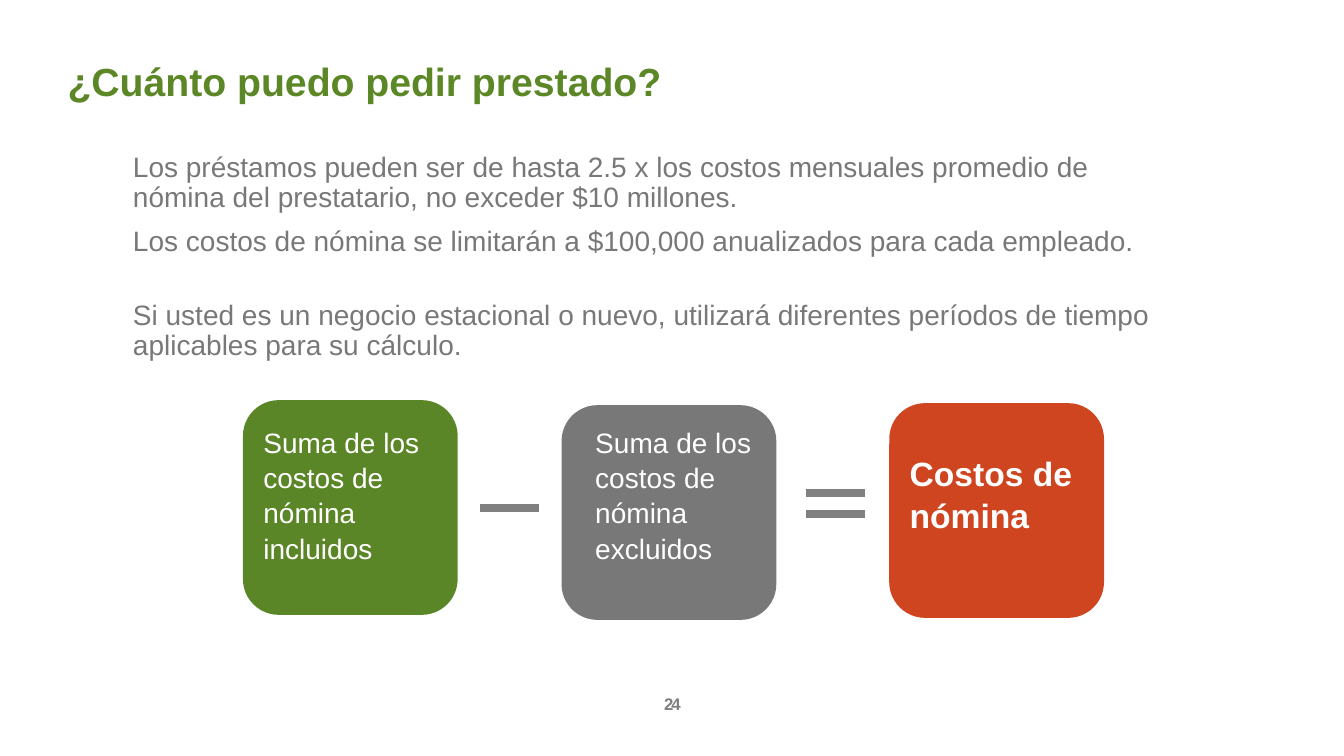
from dataclasses import dataclass
from pptx import Presentation
from pptx.dml.color import RGBColor as RGB
from pptx.enum.shapes import MSO_CONNECTOR as Line, MSO_SHAPE as Shape
from pptx.enum.text import MSO_ANCHOR as Anchor, MSO_AUTO_SIZE as Fit, PP_ALIGN as Align
from pptx.oxml.ns import qn
from pptx.util import Inches, Pt
from lxml.etree import SubElement


@dataclass(frozen=True)
class Theme:
    """Hold the colours, font and type sizes."""
    face: str = "Arial"
    head: str = "5C8727"
    green: str = "5B8627"
    gray: str = "787878"
    rust: str = "CF4520"
    mark: str = "808080"
    white: str = "FFFFFF"
    title: int = 28
    text: int = 20
    total: int = 24
    note: int = 12


THEME = Theme()


def apply(item, form):
    """Set each attribute in a dict of format values."""
    for name, value in form.items():
        setattr(item, name, value)


def place(shape, box):
    """Move a shape to a box given in inches."""
    sides = map(Inches, box)
    apply(shape, dict(zip(("left", "top", "width", "height"), sides)))


def write(frame, lines, size, color, bold=False, gaps=(0,), form=None, **para):
    """Fill a text frame with one paragraph for each line."""
    base = {"word_wrap": True, "auto_size": Fit.NONE, "vertical_anchor": Anchor.TOP}
    apply(frame, base | (form or {}))
    for pos, (line, gap) in enumerate(zip(lines, gaps)):
        part = frame.add_paragraph() if pos else frame.paragraphs[0]
        part.text = line
        apply(part, {"alignment": Align.LEFT, "space_before": Pt(gap)} | para)
        font = part.runs[0].font
        apply(font, {"name": THEME.face, "size": Pt(size), "bold": bold})
        font.color.rgb = RGB.from_string(color)


def add_head(slide, box):
    """Place and format the slide title."""
    head = slide.shapes.title
    place(head, box)
    write(head.text_frame, ["¿Cuánto puedo pedir prestado?"], THEME.title,
          THEME.head, True, line_spacing=0.9)


def add_body(slide, box):
    """Place the loan rules."""
    lines = [
        "Los préstamos pueden ser de hasta 2.5 x los costos mensuales promedio de "
        "nómina del prestatario, no exceder $10 millones.",
        "Los costos de nómina se limitarán a $100,000 anualizados para cada empleado.",
        "Si usted es un negocio estacional o nuevo, utilizará diferentes períodos de "
        "tiempo aplicables para su cálculo.",
    ]
    body = slide.shapes.add_textbox(*map(Inches, box))
    write(body.text_frame, lines, THEME.text, THEME.gray,
          gaps=(0, 10, 31), line_spacing=0.9)


def add_card(slide, box, text, fill, size, pad, bold=False):
    """Place a rounded card with its text inset by pad."""
    card = slide.shapes.add_shape(Shape.ROUNDED_RECTANGLE, *map(Inches, box))
    card.shadow.inherit = False
    card.fill.solid()
    card.fill.fore_color.rgb = RGB.from_string(fill)
    card.line.fill.background()
    left, top = map(Inches, pad)
    form = {"margin_left": left, "margin_top": top, "margin_right": Inches(0.05)}
    write(card.text_frame, [text], size, THEME.white, bold, form=form,
          line_spacing=1.05)


def add_bar(slide, left, top, width):
    """Draw one thick bar of a math sign."""
    ends = map(Inches, (left, top, left + width, top))
    bar = slide.shapes.add_connector(Line.STRAIGHT, *ends)
    bar.line.width = Pt(6)
    bar.line.color.rgb = RGB.from_string(THEME.mark)
    SubElement(bar._element.spPr, qn("a:effectLst"))


def add_sum(slide, box):
    """Place the three cards and the signs between them."""
    left, top, width, height = box
    side = 2.13
    cards = [
        (0, 0, "Suma de los costos de nómina incluidos",
         THEME.green, THEME.text, (0.1, 0.13)),
        (3.16, 0.05, "Suma de los costos de nómina excluidos",
         THEME.gray, THEME.text, (0.23, 0.08)),
        (width - side, 0.03, "Costos de nómina",
         THEME.rust, THEME.total, (0.1, 0.37), True),
    ]
    for dx, dy, *rest in cards:
        add_card(slide, (left + dx, top + dy, side, side), *rest)
    for dx, dy in ((2.35, 1.07), (5.58, 0.92), (5.58, 1.13)):
        add_bar(slide, left + dx, top + dy, 0.59)


def add_page(slide, box):
    """Place the page number."""
    page = slide.shapes.add_textbox(*map(Inches, box))
    write(page.text_frame, ["24"], THEME.note, THEME.mark, True,
          alignment=Align.RIGHT)
    page.text_frame.paragraphs[0].runs[0].font._element.set("spc", "-150")


def main():
    """Build and save the slide."""
    deck = Presentation()
    apply(deck, {"slide_width": Inches(13.33), "slide_height": Inches(7.5)})
    slide = deck.slides.add_slide(deck.slide_layouts[5])
    add_head(slide, (0.57, 0.57, 10.1, 0.4))
    add_body(slide, (1.22, 1.47, 10.51, 2.3))
    add_sum(slide, (2.41, 3.97, 8.54, 2.18))
    add_page(slide, (6.48, 6.83, 0.37, 0.4))
    deck.save("out.pptx")


if __name__ == "__main__":
    main()
